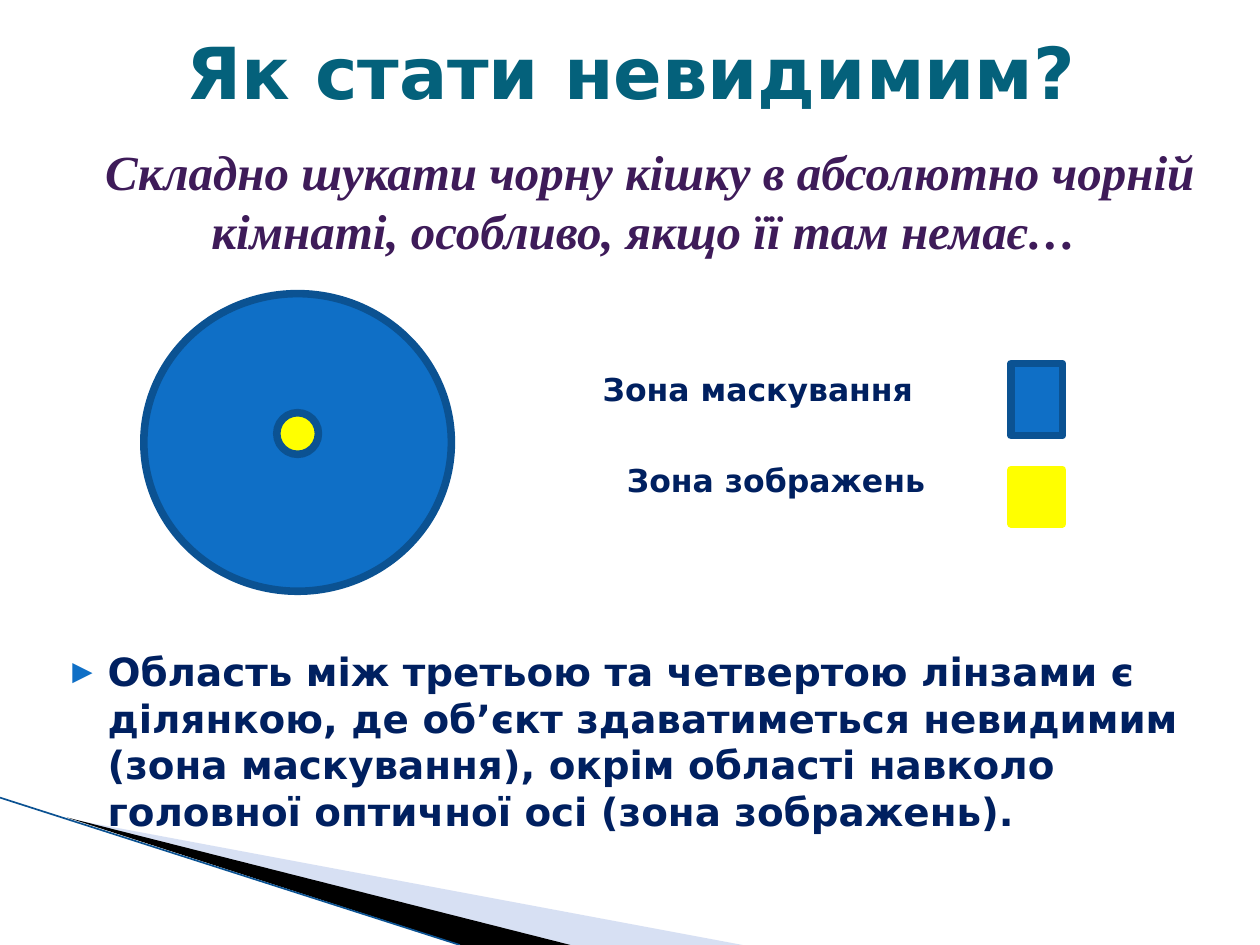
from dataclasses import dataclass

from lxml.etree import SubElement
from pptx import Presentation
from pptx.dml.color import RGBColor
from pptx.enum.shapes import MSO_CONNECTOR, MSO_SHAPE
from pptx.enum.text import MSO_ANCHOR, PP_ALIGN
from pptx.oxml.ns import qn
from pptx.util import Cm, Pt

SANS = "DejaVu Sans"
SERIF = "Times New Roman"
NAVY = "002060"
BLUE = "0F6FC6"
DARK_BLUE = "0B5292"
YELLOW = "FFFF00"
OUTLINE_WIDTH = 4.33


@dataclass(frozen=True)
class Box:
    left: float
    top: float
    width: float
    height: float

    def lengths(self) -> tuple:
        return Cm(self.left), Cm(self.top), Cm(self.width), Cm(self.height)


@dataclass(frozen=True)
class Zone:
    box: Box
    preset: MSO_SHAPE
    fill: str
    outline: str


@dataclass(frozen=True)
class Label:
    box: Box
    wording: str


@dataclass(frozen=True)
class Wedge:
    corners: tuple
    fill: str
    opacity: int = 100


WEDGES = (
    Wedge(((1.4, 16.51), (14.97, 19.05), (11.49, 19.05)), "9DB2E1", 40),
    Wedge(((1.35, 16.48), (11.5, 19.05), (9.29, 19.05)), "000000"),
)
ZONES = (
    Zone(Box(2.9, 5.92, 6.2, 6), MSO_SHAPE.OVAL, BLUE, DARK_BLUE),
    Zone(Box(5.58, 8.32, 0.84, 0.84), MSO_SHAPE.OVAL, YELLOW, DARK_BLUE),
    Zone(Box(20.38, 7.33, 1.04, 1.45), MSO_SHAPE.RECTANGLE, BLUE, DARK_BLUE),
    Zone(Box(20.38, 9.47, 1.04, 1.09), MSO_SHAPE.RECTANGLE, YELLOW, YELLOW),
)
LABELS = (
    Label(Box(11.9, 7.33, 8, 1.02), "Зона маскування"),
    Label(Box(12.39, 9.16, 7.54, 1.02), "Зона зображень"),
)


def color(code: str) -> RGBColor:
    return RGBColor.from_string(code)


def add_text(paragraph, wording: str, size: float, code: str,
             face: str = SANS, italic: bool = False) -> None:
    run = paragraph.add_run()
    run.text = wording
    run.font.name = face
    run.font.size = Pt(size)
    run.font.bold = True
    run.font.italic = italic
    run.font.color.rgb = color(code)


def add_paragraph_box(slide, box: Box):
    frame = slide.shapes.add_textbox(*box.lengths()).text_frame
    frame.word_wrap = True
    return frame.paragraphs[0]


def add_wedge(slide, wedge: Wedge) -> None:
    first, *others = [(Cm(x), Cm(y)) for x, y in wedge.corners]
    builder = slide.shapes.build_freeform(*first)
    builder.add_line_segments(others)
    shape = builder.convert_to_shape()
    shape.shadow.inherit = False
    shape.fill.solid()
    shape.fill.fore_color.rgb = color(wedge.fill)
    shape.line.fill.background()
    if wedge.opacity < 100:
        tint = shape._element.spPr.find(qn("a:solidFill"))[0]
        SubElement(tint, qn("a:alpha"), val=str(wedge.opacity * 1000))


def add_edge(slide) -> None:
    edge = slide.shapes.add_connector(
        MSO_CONNECTOR.STRAIGHT, Cm(0), Cm(16.08), Cm(9.27), Cm(19.05))
    edge.line.color.rgb = color(DARK_BLUE)
    edge.line.width = Pt(0.95)
    SubElement(edge._element.spPr, qn("a:effectLst"))


def add_zone(slide, zone: Zone) -> None:
    shape = slide.shapes.add_shape(zone.preset, *zone.box.lengths())
    shape.shadow.inherit = False
    shape.fill.solid()
    shape.fill.fore_color.rgb = color(zone.fill)
    shape.line.color.rgb = color(zone.outline)
    shape.line.width = Pt(OUTLINE_WIDTH)


def add_bullet(paragraph) -> None:
    properties = paragraph._p.get_or_add_pPr()
    properties.set("marL", str(Cm(1.02)))
    properties.set("indent", str(-Cm(0.71)))
    bullet_color = SubElement(properties, qn("a:buClr"))
    SubElement(bullet_color, qn("a:srgbClr"), val=BLUE)
    SubElement(properties, qn("a:buSzPct"), val="68000")
    SubElement(properties, qn("a:buFont"), typeface=SANS)
    SubElement(properties, qn("a:buChar"), char="▶")


def add_title(slide) -> None:
    title = slide.shapes.title
    title.left, title.top, title.width, title.height = Box(1.3, 0.33, 22.86, 2.21).lengths()
    title.text_frame.vertical_anchor = MSO_ANCHOR.MIDDLE
    heading = title.text_frame.paragraphs[0]
    heading.alignment = PP_ALIGN.CENTER
    add_text(heading, "Як стати невидимим?", 41, "04617B")


def main() -> None:
    deck = Presentation()
    deck.slide_width, deck.slide_height = Cm(25.4), Cm(19.05)
    slide = deck.slides.add_slide(deck.slide_layouts[5])

    for wedge in WEDGES:
        add_wedge(slide, wedge)
    add_edge(slide)
    add_title(slide)

    epigraph = add_paragraph_box(slide, Box(1.1, 2.73, 24, 2.64))
    epigraph.alignment = PP_ALIGN.CENTER
    add_text(epigraph, "Складно шукати чорну кішку в абсолютно чорній кімнаті, "
             "особливо, якщо її там немає… ", 28, "3E1B59", SERIF, True)

    for zone in ZONES:
        add_zone(slide, zone)
    for label in LABELS:
        add_text(add_paragraph_box(slide, label.box), label.wording, 18, NAVY)

    explanation = add_paragraph_box(slide, Box(0.9, 12.93, 23.7, 4.39))
    add_bullet(explanation)
    add_text(explanation, "Область між третьою та четвертою лінзами є ділянкою, "
             "де об’єкт здаватиметься невидимим (зона маскування), окрім області "
             "навколо головної оптичної осі (зона зображень).", 22.2, NAVY)

    deck.save("out.pptx")


if __name__ == "__main__":
    main()
